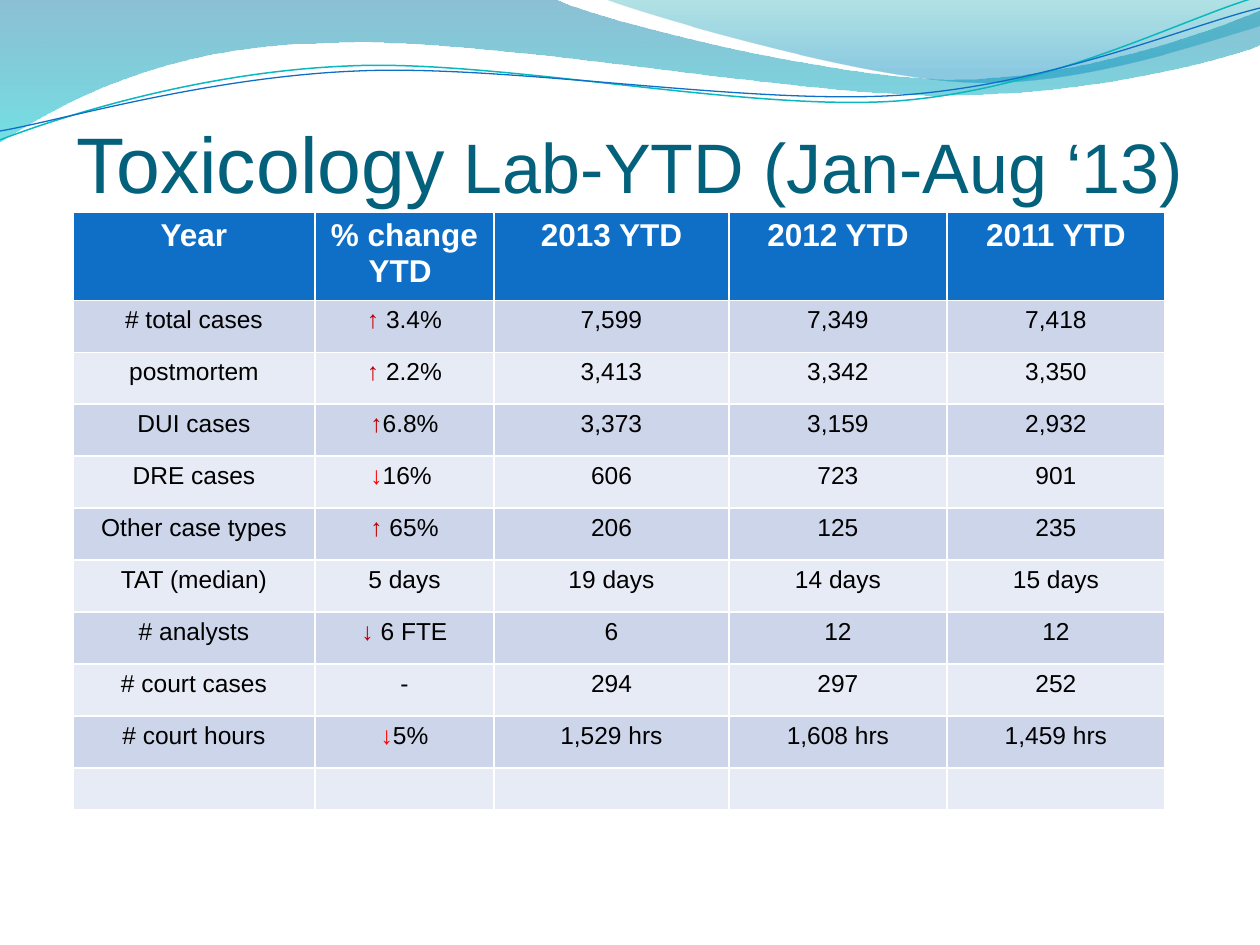
import math

import pptx
import pptx.dml.color
import pptx.enum.text
import pptx.oxml
import pptx.oxml.ns
import pptx.util

PX = 914400 / 126
FONT = "Arial"
TILT = 2.7  # degrees by which the thin curves are turned to the left
COLORS = {
    "title": "04617B", "header": "0F6FC6", "white": "FFFFFF", "black": "000000",
    "band_dark": "CCD5EA", "band_light": "E7EBF5",
    "dark_red": "C00000", "bright_red": "FF0000",
    "wave_top": "0074A1", "wave_bottom": "00C6CF",
    "corner_top": "00A1A9", "corner_bottom": "008BBF",
    "teal_line": "0AB8BF", "blue_line": "0F6FC6",
}

# Outlines in px: one point is a straight step, three points are a Bézier curve
WAVE = [[(0, 0)], [(554, -1)], [(600, 21), (837, 79), (955, 79)],
        [(1075, 79), (1207, 33), (1260, 11)], [(1261, 45)],
        [(1239, 55), (1096, 96), (940, 95)], [(784, 95), (481, 35), (324, 43)],
        [(163, 45), (58, 105), (-1, 142)]]
CORNER = [[(604, -1)], [(641, 14), (859, 78), (969, 82)],
          [(1079, 87), (1211, 40), (1260, 26)], [(1260, 0)]]
TEAL_CURVE = [[(0, 140)], [(60, 117), (199, 72), (349, 66)],
              [(498, 59), (747, 112), (898, 101)], [(1050, 89), (1182, 19), (1257, -3)]]
BLUE_CURVE = [[(0, 131)], [(59, 121), (207, 77), (357, 71)],
              [(508, 64), (752, 106), (903, 95)], [(1053, 84), (1186, 26), (1260, 8)]]

# Table content; a change is (arrow, arrow colour, rest of the text)
HEADER = ["Year", "% change YTD ", "2013 YTD", "2012 YTD", "2011 YTD"]
ROWS = [
    ["# total cases", ("↑", "dark_red", " 3.4%"), "7,599", "7,349", "7,418"],
    ["postmortem", ("↑", "dark_red", " 2.2%"), "3,413", "3,342", "3,350"],
    ["DUI cases", ("↑", "dark_red", "6.8%"), "3,373", "3,159", "2,932"],
    ["DRE cases", ("↓", "bright_red", "16% "), "606", "723", "901"],
    ["Other case types", ("↑", "dark_red", " 65%"), "206", "125", "235"],
    ["TAT (median)", "5 days", "19 days", "14 days", "15 days"],
    ["# analysts", ("↓", "dark_red", " 6 FTE"), "6", "12", "12"],
    ["# court cases", "-", "294", "297", "252"],
    ["# court hours", ("↓", "bright_red", "5%"), "1,529 hrs", "1,608 hrs", "1,459 hrs"],
    [""] * 5,
]
COLUMN_WIDTHS = [242, 179, 235, 218, 218]
ROW_HEIGHTS = [82] + [52] * 9 + [32]


def px(value):
    return pptx.util.Emu(round(value * PX))


def rgb(name):
    return pptx.dml.color.RGBColor.from_string(COLORS[name])


def turn(point, center, degrees):
    cosine, sine = math.cos(math.radians(degrees)), math.sin(math.radians(degrees))
    dx, dy = point[0] - center[0], point[1] - center[1]
    return center[0] + dx * cosine - dy * sine, center[1] + dx * sine + dy * cosine


def add_outline(slide, outline, close):
    """Add a freeform, joining each group of three points into a Bézier curve."""
    points = [(px(x), px(y)) for segment in outline for x, y in segment]
    builder = slide.shapes.build_freeform(*points[0], scale=1.0)
    builder.add_line_segments(points[1:], close=close)
    shape = builder.convert_to_shape()
    shape.shadow.inherit = False
    steps = iter(shape._element.findall(".//" + pptx.oxml.ns.qn("a:lnTo")))
    for segment in outline[1:]:
        group = [next(steps) for _ in segment]
        if len(group) == 3:
            curve = pptx.oxml.parse_xml(f'<a:cubicBezTo {pptx.oxml.ns.nsdecls("a")}/>')
            group[0].addprevious(curve)
            for step in group:
                curve.append(step[0])
                step.getparent().remove(step)
    return shape


def add_wave(slide, outline, stops):
    """Add a filled wave; each stop is (colour, position, opacity in percent)."""
    shape = add_outline(slide, outline, close=True)
    shape.line.fill.background()
    shape.fill.gradient()
    shape.fill.gradient_angle = 270
    for stop, (color, position, _) in zip(shape.fill.gradient_stops, stops):
        stop.color.rgb = rgb(color)
        stop.position = position
    stop_colors = shape._element.spPr.findall(".//" + pptx.oxml.ns.qn("a:srgbClr"))
    for element, (_, _, opacity) in zip(stop_colors, stops):
        element.append(pptx.oxml.parse_xml(
            f'<a:alpha {pptx.oxml.ns.nsdecls("a")} val="{opacity * 1000}"/>'))


def add_curve(slide, outline, center, color, width):
    level = [[turn(point, center, TILT) for point in segment] for segment in outline]
    shape = add_outline(slide, level, close=False)
    shape.rotation = 360 - TILT
    shape.fill.background()
    shape.line.color.rgb = rgb(color)
    shape.line.width = pptx.util.Pt(width)


def add_title(slide):
    box = slide.shapes.add_textbox(px(63), px(73), px(1134), px(136))
    frame = box.text_frame
    frame.word_wrap = True
    frame.vertical_anchor = pptx.enum.text.MSO_ANCHOR.BOTTOM
    frame.margin_left = frame.margin_right = frame.margin_bottom = 0
    paragraph = frame.paragraphs[0]
    paragraph.alignment = pptx.enum.text.PP_ALIGN.CENTER
    for text, size in [("Toxicology", 45), (" Lab-YTD (Jan-Aug ‘13)", 40)]:
        run = paragraph.add_run()
        run.text = text
        run.font.name = FONT
        run.font.size = pptx.util.Pt(size)
        run.font.color.rgb = rgb("title")


def fill_cell(cell, content, size, color, bold, fill):
    cell.fill.solid()
    cell.fill.fore_color.rgb = rgb(fill)
    paragraph = cell.text_frame.paragraphs[0]
    paragraph.alignment = pptx.enum.text.PP_ALIGN.CENTER
    paragraph.font.name = FONT
    paragraph.font.size = pptx.util.Pt(size)
    paragraph.font.bold = bold
    paragraph.font.color.rgb = rgb(color)
    if not content:
        # An empty line takes its height from the paragraph end mark
        paragraph._p.append(pptx.oxml.parse_xml(
            f'<a:endParaRPr {pptx.oxml.ns.nsdecls("a")} sz="{size * 100}"/>'))
    elif isinstance(content, tuple):
        arrow, arrow_color, rest = content
        for text, part_color in [(arrow, arrow_color), (rest, color)]:
            run = paragraph.add_run()
            run.text = text
            run.font.color.rgb = rgb(part_color)
    else:
        paragraph.add_run().text = content


def add_case_table(slide):
    table = slide.shapes.add_table(
        len(ROW_HEIGHTS), len(COLUMN_WIDTHS), px(73), px(212),
        px(sum(COLUMN_WIDTHS)), px(sum(ROW_HEIGHTS))).table
    for column, width in zip(table.columns, COLUMN_WIDTHS):
        column.width = px(width)
    for row, height in zip(table.rows, ROW_HEIGHTS):
        row.height = px(height)
    for column_index, content in enumerate(HEADER):
        fill_cell(table.cell(0, column_index), content, 18, "white", True, "header")
    for row_index, contents in enumerate(ROWS, start=1):
        band = "band_dark" if row_index % 2 else "band_light"
        for column_index, content in enumerate(contents):
            fill_cell(table.cell(row_index, column_index), content, 14, "black", False, band)


def main():
    presentation = pptx.Presentation()
    presentation.slide_width, presentation.slide_height = px(1260), px(945)
    slide = presentation.slides.add_slide(presentation.slide_layouts[6])
    # Wave decoration along the top
    add_wave(slide, WAVE, [("wave_top", 0, 45), ("wave_bottom", 1, 55)])
    add_wave(slide, CORNER, [("corner_top", 0, 30), ("corner_bottom", 0.8, 45)])
    add_curve(slide, TEAL_CURVE, (629, 72), "teal_line", 0.85)
    add_curve(slide, BLUE_CURVE, (629, 74), "blue_line", 0.75)
    # Title and table
    add_title(slide)
    add_case_table(slide)
    presentation.save("out.pptx")


if __name__ == "__main__":
    main()
